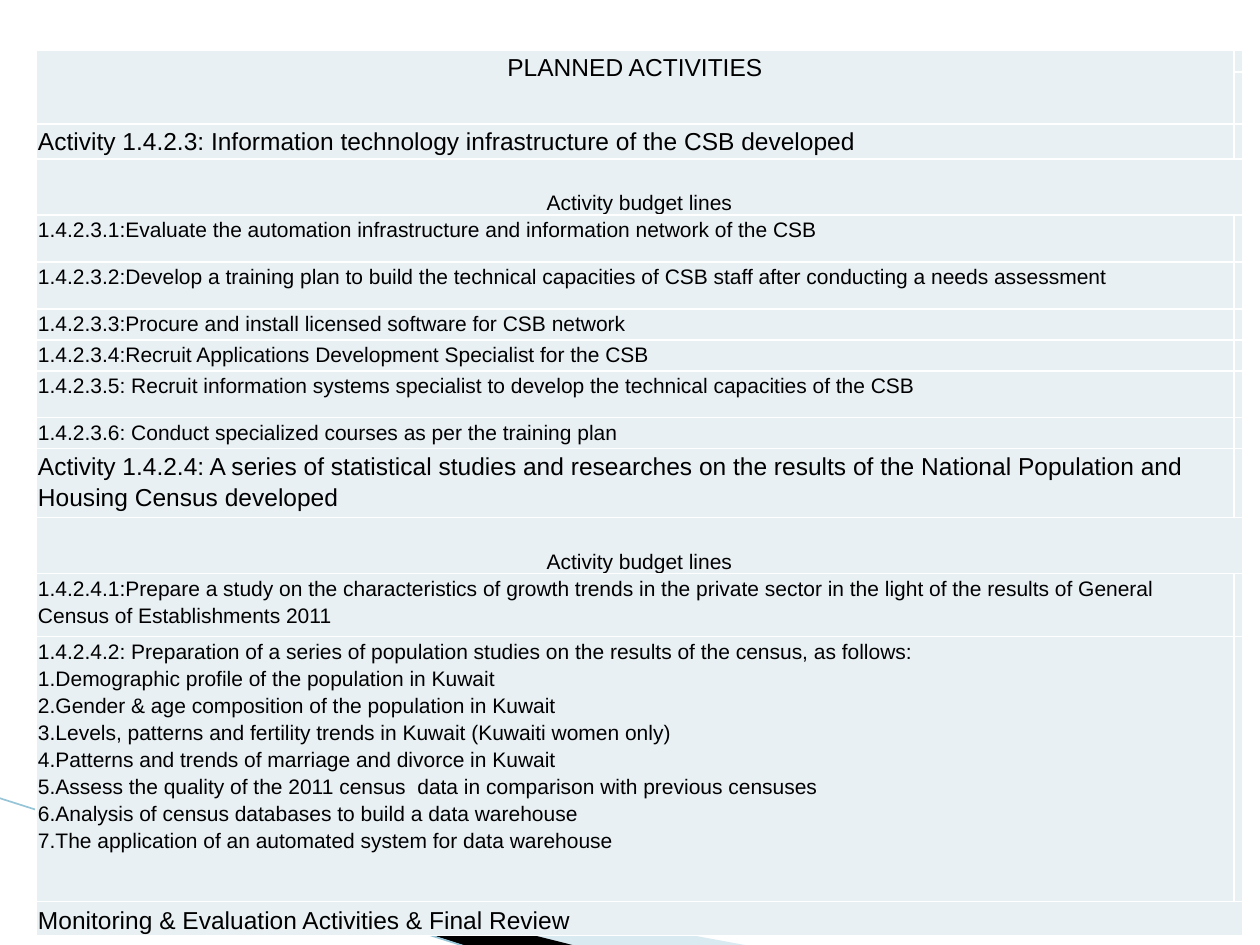
from dataclasses import dataclass

from lxml import etree
from pptx import Presentation
from pptx import util as u
from pptx.dml.color import RGBColor as Rgb
from pptx.enum import shapes, text
from pptx.oxml.ns import qn


@dataclass
class Theme:
    font: str = "Arial"
    head: int = 14
    body: int = 12
    tiny: int = 5
    ink: str = "000000"
    cell: str = "E8F0F4"
    rule: str = "FFFFFF"
    pale: str = "A0CBDC"
    line: str = "97C5D8"


theme = Theme()
PX = 914400 / 126


def px(n):
    return u.Emu(round(n * PX))


def edge(cell):
    props = cell._tc.get_or_add_tcPr()
    for i, side in enumerate(("lnL", "lnR", "lnT", "lnB")):
        ln = etree.Element(qn("a:" + side), w="12700")
        fill = etree.SubElement(ln, qn("a:solidFill"))
        etree.SubElement(fill, qn("a:srgbClr"), val=theme.rule)
        props.insert(i, ln)


deck = Presentation()
deck.slide_width, deck.slide_height = px(1260), px(945)
slide = deck.slides.add_slide(deck.slide_layouts[6])

waves = [
    (theme.pale, 40, [(69, 820), (750, 946), (575, 946), (69, 819)]),
    (theme.ink, 100, [(67, 818), (576, 946), (469, 947), (68, 819)]),
]
for color, alpha, pts in waves:
    path = slide.shapes.build_freeform(*pts[0], scale=PX)
    path.add_line_segments(pts[1:], close=True)
    wave = path.convert_to_shape()
    wave.shadow.inherit = False
    wave.fill.solid()
    wave.fill.fore_color.rgb = Rgb.from_string(color)
    wave.line.fill.background()
    if alpha < 100:
        tint = wave._element.spPr.find(qn("a:solidFill"))[0]
        etree.SubElement(tint, qn("a:alpha"), val=str(alpha * 1000))

stroke = slide.shapes.add_connector(
    shapes.MSO_CONNECTOR.STRAIGHT, px(-1), px(798), px(467), px(947))
stroke.line.color.rgb = Rgb.from_string(theme.line)
stroke.line.width = u.Pt(0.95)
etree.SubElement(stroke._element.spPr, qn("a:effectLst"))

studies = [
    "1.4.2.4.2: Preparation of a series of population studies on the results of the census, as follows:",
    "1.Demographic profile of the population in Kuwait",
    "2.Gender & age composition of the population in Kuwait",
    "3.Levels, patterns and fertility trends in Kuwait (Kuwaiti women only)",
    "4.Patterns and trends of marriage and divorce in Kuwait",
    "5.Assess the quality of the 2011 census  data in comparison with previous censuses",
    "6.Analysis of census databases to build a data warehouse",
    "7.The application of an automated system for data warehouse",
]
rows = [
    (22, "title", "PLANNED ACTIVITIES"),
    (52, "", ""),
    (35, "head", "Activity 1.4.2.3: Information technology infrastructure of the CSB developed"),
    (56, "band", "Activity budget lines"),
    (47, "item", "1.4.2.3.1:Evaluate the automation infrastructure and information network of the CSB"),
    (47, "item", "1.4.2.3.2:Develop a training plan to build the technical capacities of CSB staff after conducting a needs assessment"),
    (31, "item", "1.4.2.3.3:Procure and install licensed software for CSB network"),
    (31, "item", "1.4.2.3.4:Recruit Applications Development Specialist for the CSB"),
    (47, "item", "1.4.2.3.5: Recruit information systems specialist to develop the technical capacities of the CSB"),
    (31, "item", "1.4.2.3.6: Conduct specialized courses as per the training plan"),
    (69, "head", "Activity 1.4.2.4: A series of statistical studies and researches on the results of the National Population and Housing Census developed"),
    (56, "band", "Activity budget lines"),
    (63, "item", "1.4.2.4.1:Prepare a study on the characteristics of growth trends in the private sector in the light of the results of General Census of Establishments 2011"),
    (265, "item", "\n".join(studies)),
    (34, "last", "Monitoring & Evaluation Activities & Final Review"),
]
high = sum(row[0] for row in rows)
grid = slide.shapes.add_table(
    len(rows), 2, px(36), px(50), px(1207), px(high)).table
grid.first_row = grid.horz_banding = False
grid.columns[0].width, grid.columns[1].width = px(1198), px(9)

for r, (tall, kind, words) in enumerate(rows):
    grid.rows[r].height = px(tall)
    for c, body in enumerate((words, "")):
        cell = grid.cell(r, c)
        cell.fill.solid()
        cell.fill.fore_color.rgb = Rgb.from_string(theme.cell)
        edge(cell)
        cell.margin_left = cell.margin_right = px(2)
        cell.margin_top = cell.margin_bottom = 0
        if not body:
            para = cell.text_frame.paragraphs[0]
            etree.SubElement(para._p, qn("a:endParaRPr"), sz=str(theme.tiny * 100))
            continue
        cell.text_frame.text = body
        if kind == "band":
            cell.vertical_anchor = text.MSO_ANCHOR.BOTTOM
        elif kind == "last":
            cell.vertical_anchor = text.MSO_ANCHOR.MIDDLE
        for para in cell.text_frame.paragraphs:
            para.line_spacing = 1.15
            if kind in ("title", "band"):
                para.alignment = text.PP_ALIGN.CENTER
            for run in para.runs:
                run.font.name = theme.font
                run.font.size = u.Pt(theme.body if kind in ("item", "band") else theme.head)
                run.font.color.rgb = Rgb.from_string(theme.ink)
    if kind in ("band", "last"):
        grid.cell(r, 0).merge(grid.cell(r, 1))
grid.cell(0, 0).merge(grid.cell(1, 0))

deck.save("out.pptx")
